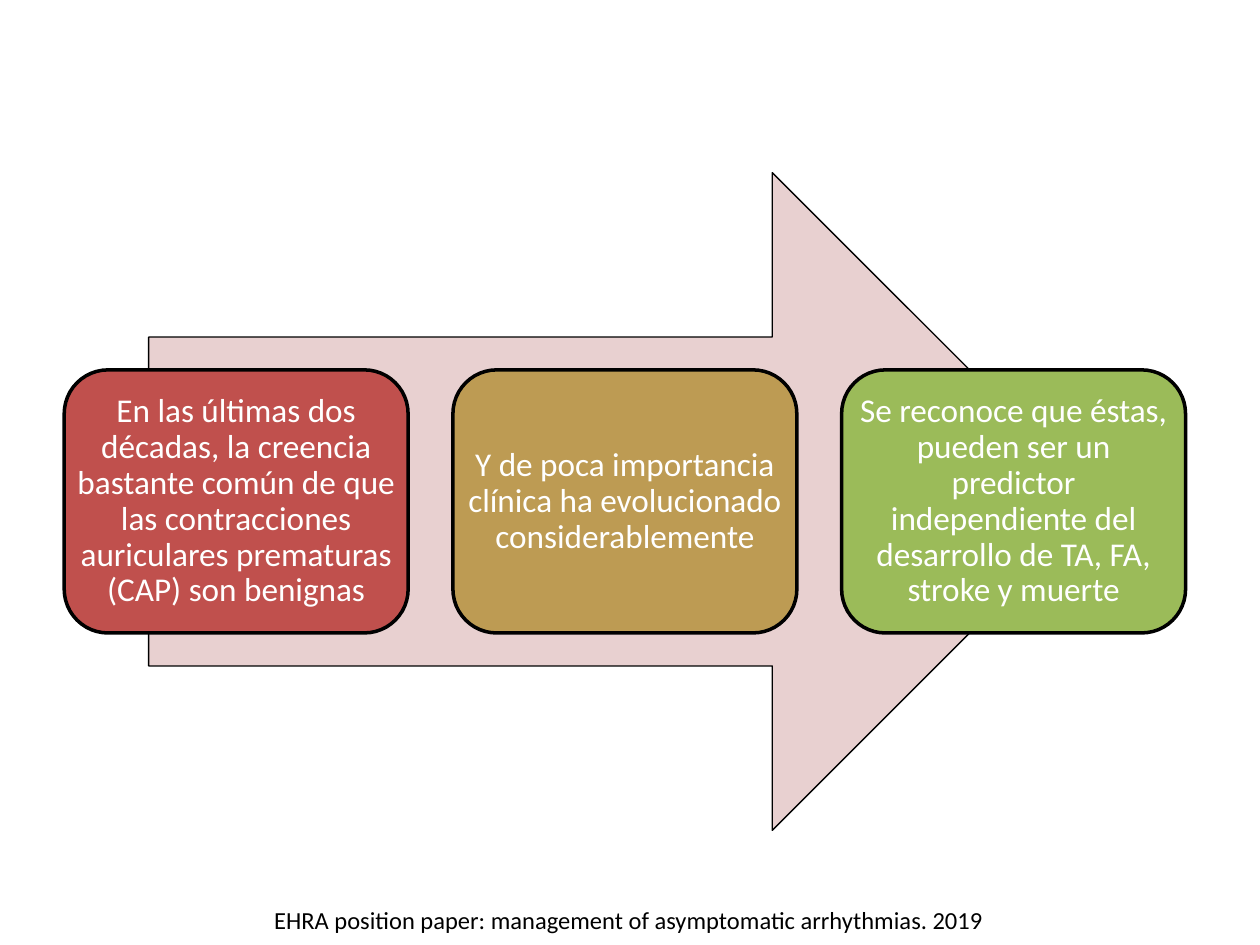
from pptx import Presentation
from pptx.dml.color import RGBColor
from pptx.enum.shapes import MSO_SHAPE
from pptx.enum.text import MSO_ANCHOR, PP_ALIGN
from pptx.util import Inches, Pt

RIGHT_ARROW = MSO_SHAPE.RIGHT_ARROW
ROUNDED_RECTANGLE = MSO_SHAPE.ROUNDED_RECTANGLE
MIDDLE = MSO_ANCHOR.MIDDLE
CENTER = PP_ALIGN.CENTER

BLACK = RGBColor(0x00, 0x00, 0x00)
WHITE = RGBColor(0xFF, 0xFF, 0xFF)
PINK = RGBColor(0xE8, 0xD0, 0xD0)
RED = RGBColor(0xC0, 0x50, 0x4D)
OCHRE = RGBColor(0xBD, 0x9B, 0x53)
GREEN = RGBColor(0x9B, 0xBB, 0x59)
FONT = "Calibri"

STEPS = [
    ("En las últimas dos décadas, la creencia bastante común de que las "
     "contracciones auriculares prematuras (CAP) son benignas", RED),
    ("Y de poca importancia clínica ha evolucionado considerablemente", OCHRE),
    ("Se reconoce que éstas, pueden ser un predictor independiente del "
     "desarrollo de TA, FA, stroke y muerte", GREEN),
]
CITATION = "EHRA position paper: management of asymptomatic arrhythmias. 2019"

SLIDE_WIDTH, SLIDE_HEIGHT = 10, 7.5
ARROW_LEFT, ARROW_TOP, ARROW_WIDTH, ARROW_HEIGHT = 1.18, 1.37, 7.56, 5.22
STEP_WIDTH, STEP_GAP = 2.73, 0.355
STEP_HEIGHT = 0.4 * ARROW_HEIGHT
STEPS_WIDTH = len(STEPS) * STEP_WIDTH + (len(STEPS) - 1) * STEP_GAP
STEPS_LEFT = ARROW_LEFT + (ARROW_WIDTH - STEPS_WIDTH) / 2
STEPS_TOP = ARROW_TOP + (ARROW_HEIGHT - STEP_HEIGHT) / 2


def add_filled_shape(slide, kind, box, fill, line_width):
    shape = slide.shapes.add_shape(kind, *map(Inches, box))
    shape.shadow.inherit = False
    shape.fill.solid()
    shape.fill.fore_color.rgb = fill
    shape.line.color.rgb = BLACK
    shape.line.width = Pt(line_width)
    return shape


def write_centered(shape, text, size, color):
    shape.text_frame.word_wrap = True
    paragraph = shape.text_frame.paragraphs[0]
    paragraph.text = text
    paragraph.alignment = CENTER
    paragraph.font.name = FONT
    paragraph.font.size = Pt(size)
    paragraph.font.color.rgb = color
    return paragraph


def main():
    presentation = Presentation()
    presentation.slide_width = Inches(SLIDE_WIDTH)
    presentation.slide_height = Inches(SLIDE_HEIGHT)
    slide = presentation.slides.add_slide(presentation.slide_layouts[6])

    arrow_box = (ARROW_LEFT, ARROW_TOP, ARROW_WIDTH, ARROW_HEIGHT)
    add_filled_shape(slide, RIGHT_ARROW, arrow_box, PINK, 0.75)

    for column, (text, color) in enumerate(STEPS):
        left = STEPS_LEFT + column * (STEP_WIDTH + STEP_GAP)
        box = (left, STEPS_TOP, STEP_WIDTH, STEP_HEIGHT)
        step = add_filled_shape(slide, ROUNDED_RECTANGLE, box, color, 2)
        frame = step.text_frame
        frame.vertical_anchor = MIDDLE
        # The rounded corners already inset the text.
        frame.margin_left = frame.margin_right = 0
        frame.margin_top = frame.margin_bottom = 0
        write_centered(step, text, 19, WHITE).line_spacing = 0.9

    citation = slide.shapes.add_textbox(
        Inches(0.98), Inches(7.13), Inches(8.02), Inches(0.34))
    write_centered(citation, CITATION, 14, BLACK)

    presentation.save("out.pptx")


if __name__ == "__main__":
    main()
